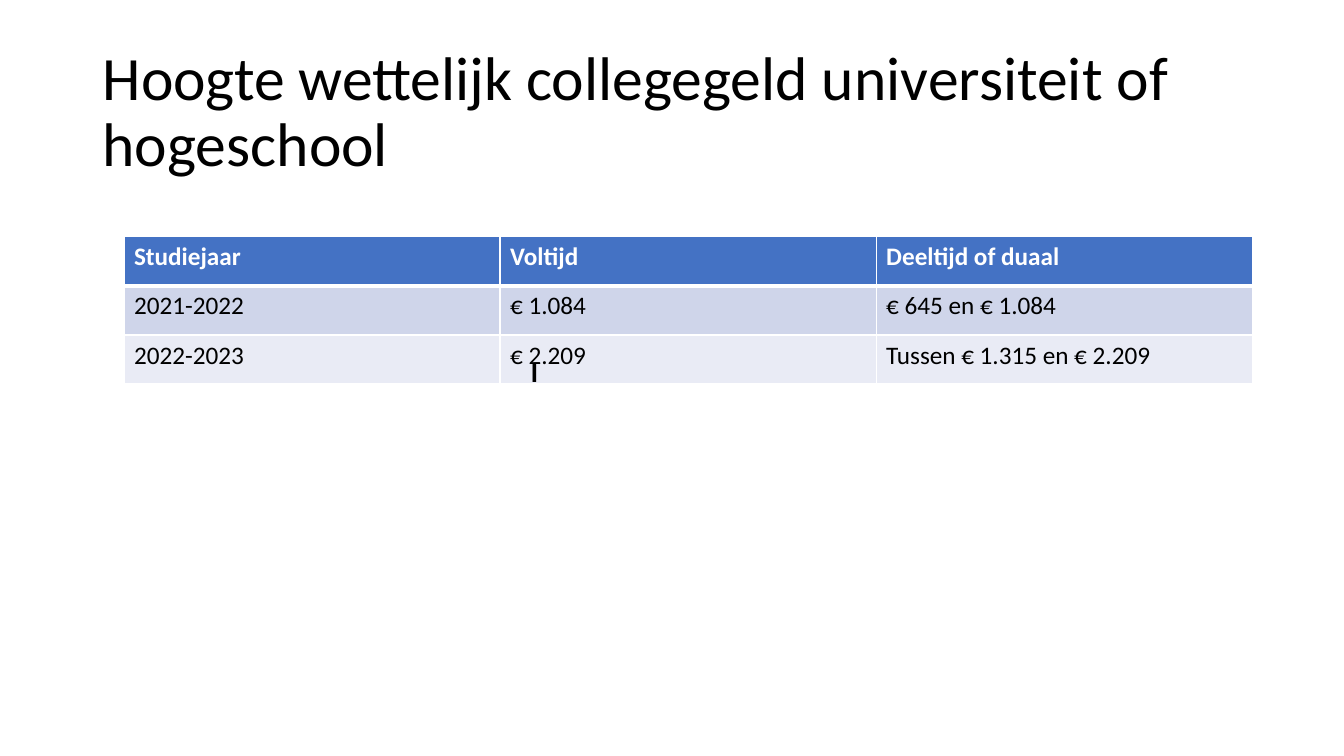
from dataclasses import dataclass

from lxml.etree import SubElement
from pptx import Presentation
from pptx.dml.color import RGBColor
from pptx.enum.text import MSO_ANCHOR
from pptx.oxml.ns import qn
from pptx.util import Pt

EMU_PER_PX = 9144  # 100 px to the inch


@dataclass(frozen=True)
class Theme:
    font: str = "Calibri"
    mark_font: str = "Roboto"
    title_size: int = 44
    body_size: int = 18
    text: str = "000000"
    header_text: str = "FFFFFF"
    header_fill: str = "4472C4"
    band_fills: tuple = ("CFD5EA", "E9EBF5")
    border: str = "FFFFFF"
    border_width: int = 1
    header_rule_width: int = 3


THEME = Theme()

TITLE = "Hoogte wettelijk collegegeld universiteit of hogeschool"
FEES = [
    ("Studiejaar", "Voltijd", "Deeltijd of duaal"),
    ("2021-2022", "€ 1.084", "€ 645 en € 1.084"),
    ("2022-2023", "€ 2.209", "Tussen € 1.315 en € 2.209"),
]


def px(length):
    return int(length * EMU_PER_PX)


def write(text_frame, text, size, color=THEME.text, font=THEME.font, bold=False):
    text_frame.text = text
    run_font = text_frame.paragraphs[0].runs[0].font
    run_font.name = font
    run_font.size = Pt(size)
    run_font.bold = bold
    run_font.color.rgb = RGBColor.from_string(color)


def add_text(slide, box, text, size, **style):
    text_frame = slide.shapes.add_textbox(*map(px, box)).text_frame
    text_frame.word_wrap = True
    write(text_frame, text, size, **style)
    return text_frame


def add_title(slide, box):
    text_frame = add_text(slide, box, TITLE, THEME.title_size)
    text_frame.vertical_anchor = MSO_ANCHOR.MIDDLE
    text_frame.paragraphs[0].line_spacing = 0.9


def set_borders(cell, top, bottom):
    """Draw all four borders; top and bottom are widths in points."""
    properties = cell._tc.get_or_add_tcPr()
    side = THEME.border_width
    for tag, width in (("lnL", side), ("lnR", side), ("lnT", top), ("lnB", bottom)):
        line = SubElement(properties, qn(f"a:{tag}"), w=str(Pt(width)))
        fill = SubElement(line, qn("a:solidFill"))
        SubElement(fill, qn("a:srgbClr"), val=THEME.border)


def add_fee_table(slide, box):
    row_count, column_count = len(FEES), len(FEES[0])
    table = slide.shapes.add_table(row_count, column_count, *map(px, box)).table
    thin, thick = THEME.border_width, THEME.header_rule_width
    for row, values in enumerate(FEES):
        header = row == 0
        fill = THEME.header_fill if header else THEME.band_fills[(row - 1) % 2]
        color = THEME.header_text if header else THEME.text
        for column, value in enumerate(values):
            cell = table.cell(row, column)
            write(cell.text_frame, value, THEME.body_size, color, bold=header)
            set_borders(cell, thick if row == 1 else thin, thick if header else thin)
            cell.fill.solid()
            cell.fill.fore_color.rgb = RGBColor.from_string(fill)


def add_mark(slide, box):
    add_text(slide, box, "l", THEME.body_size, font=THEME.mark_font, bold=True)


def main():
    presentation = Presentation()
    presentation.slide_width, presentation.slide_height = px(1333), px(750)
    slide = presentation.slides.add_slide(presentation.slide_layouts[6])
    add_title(slide, (92, 40, 1150, 145))
    add_fee_table(slide, (123, 235, 1119, 146))
    add_mark(slide, (517, 350, 300, 71))
    presentation.save("out.pptx")


if __name__ == "__main__":
    main()
